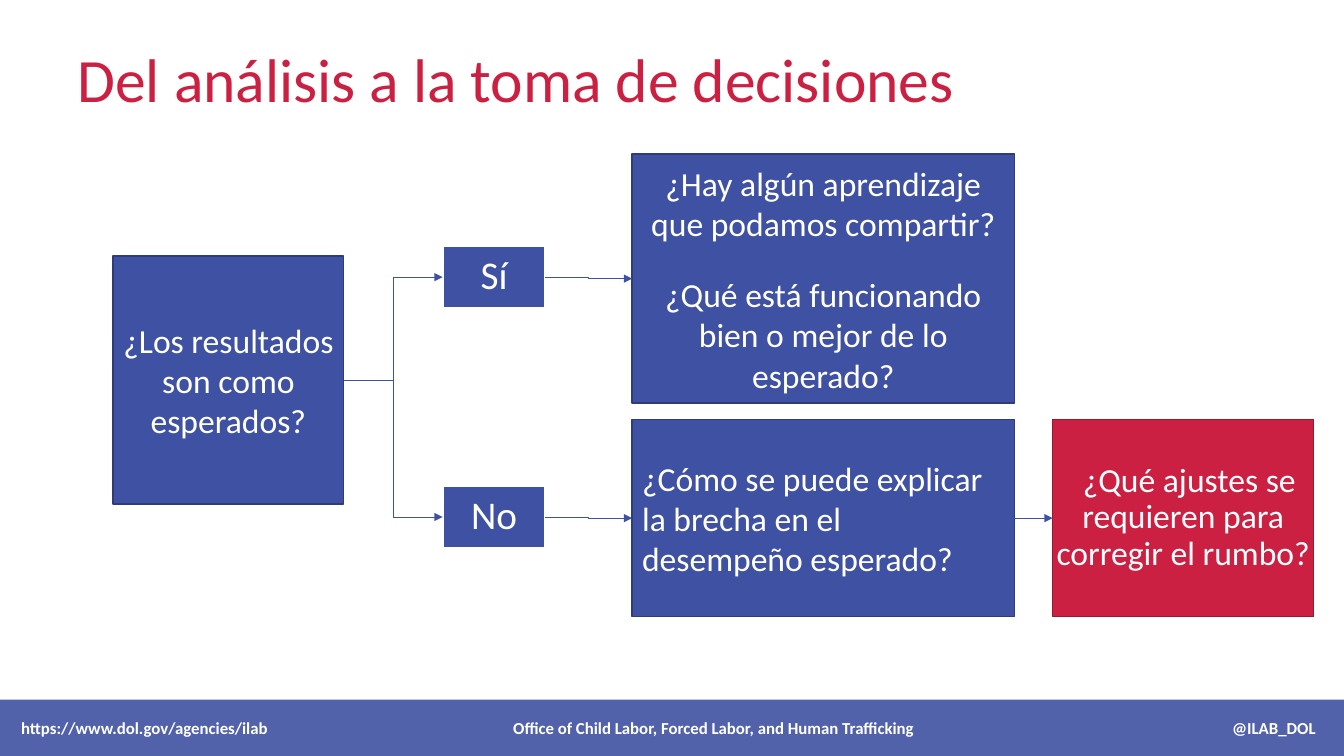
"""Builds the decision-flow slide that leads from analysis to decisions."""
from lxml.etree import SubElement
from pptx import Presentation
from pptx.dml.color import RGBColor
from pptx.enum.shapes import MSO_CONNECTOR as LINK, MSO_SHAPE
from pptx.enum.text import MSO_ANCHOR, PP_ALIGN
from pptx.oxml.ns import qn
from pptx.util import Inches, Pt

BLUE, NAVY, RED, WINE, WHITE = "3F51A2", "2F3C78", "CB2042", "961831", "FFFFFF"
LEFT, CENTER, RIGHT = PP_ALIGN.LEFT, PP_ALIGN.CENTER, PP_ALIGN.RIGHT

TITLE = "Del análisis a la toma de decisiones"
BOX = dict(fill=BLUE, border=NAVY, border_pt=1, size=24, align=CENTER, inset=0.1, spacing=1)
ANSWER = dict(BOX, border=WHITE, border_pt=1.5, size=28, inset=0.02, spacing=0.9)
ACTION = dict(BOX, fill=RED, border=WINE, inset=0.02, spacing=0.9, indent=0.12)
STEPS = {
    "results": ((1.12, 2.54, 2.29, 2.46), ["¿Los resultados son como esperados?"], BOX),
    "yes": ((4.39, 2.44, 1.02, 0.62), ["Sí"], ANSWER),
    "no": ((4.39, 4.82, 1.02, 0.62), ["No"], ANSWER),
    "learning": ((6.27, 1.53, 3.79, 2.47),
                 ["¿Hay algún aprendizaje que podamos compartir?",
                  "¿Qué está funcionando bien o mejor de lo esperado?"], BOX),
    "gap": ((6.27, 4.16, 3.79, 1.96),
            ["¿Cómo se puede explicar la brecha en el desempeño esperado?"],
            dict(BOX, align=LEFT)),
    "adjustments": ((10.44, 4.16, 2.59, 1.96),
                    ["¿Qué ajustes se requieren para corregir el rumbo?"], ACTION),
}
FLOWS = [("results", "yes", LINK.ELBOW), ("results", "no", LINK.ELBOW),
         ("yes", "learning", LINK.ELBOW), ("no", "gap", LINK.ELBOW),
         ("gap", "adjustments", LINK.STRAIGHT)]
FOOTER_TOP, FOOTER_HEIGHT = 6.94, 0.56
FOOTER = [("https://www.dol.gov/agencies/ilab", 0.21, 4, LEFT),
          ("Office of Child Labor, Forced Labor, and Human Trafficking", 4.58, 5, CENTER),
          ("@ILAB_DOL", 11.05, 2, RIGHT)]


def color(hex_code):
    return RGBColor.from_string(hex_code)


def write(shape, lines, size, ink=WHITE, align=LEFT, inset=0.1, spacing=1, indent=0, bold=False):
    frame = shape.text_frame
    frame.text = "\n".join(lines)
    frame.word_wrap = True
    frame.vertical_anchor = MSO_ANCHOR.MIDDLE
    frame.margin_left = frame.margin_right = Inches(inset)
    frame.margin_top = frame.margin_bottom = Inches(min(inset, 0.05))
    for index, paragraph in enumerate(frame.paragraphs):
        paragraph.alignment = align
        paragraph.line_spacing = spacing
        paragraph.space_before = Pt(22 if index else 0)
        if indent:
            paragraph._p.get_or_add_pPr().set("indent", str(Inches(indent)))
        for run in paragraph.runs:
            run.font.name, run.font.size, run.font.bold = "Calibri", Pt(size), bold
            run.font.color.rgb = color(ink)


def add_box(slide, place, fill, border=None, border_pt=1):
    box = slide.shapes.add_shape(MSO_SHAPE.RECTANGLE, *map(Inches, place))
    box.shadow.inherit = False
    box.fill.solid()
    box.fill.fore_color.rgb = color(fill)
    if border:
        box.line.color.rgb = color(border)
        box.line.width = Pt(border_pt)
    else:
        box.line.fill.background()
    return box


def add_step(slide, place, lines, style):
    text = dict(style)
    box = add_box(slide, place, text.pop("fill"), text.pop("border"), text.pop("border_pt"))
    write(box, lines, **text)
    return box


def add_arrow(slide, source, target, kind):
    arrow = slide.shapes.add_connector(kind, 0, 0, 0, 0)
    arrow.begin_connect(source, 3)
    arrow.end_connect(target, 1)
    arrow.line.color.rgb = color(BLUE)
    arrow.line.width = Pt(0.5)
    SubElement(arrow.line._get_or_add_ln(), qn("a:tailEnd"), type="triangle")
    SubElement(arrow._element.spPr, qn("a:effectLst"))


def add_label(slide, place, text, size, **style):
    label = slide.shapes.add_textbox(*map(Inches, place))
    write(label, [text], size, **style)


def main():
    deck = Presentation()
    deck.slide_width, deck.slide_height = Inches(13.33), Inches(7.5)
    slide = deck.slides.add_slide(deck.slide_layouts[6])

    add_label(slide, (0.67, 0.17, 10.01, 1.29), TITLE, 44, ink=RED, spacing=0.9)
    steps = {name: add_step(slide, *step) for name, step in STEPS.items()}
    for source, target, kind in FLOWS:
        add_arrow(slide, steps[source], steps[target], kind)

    band = add_box(slide, (0, FOOTER_TOP, 13.33, FOOTER_HEIGHT), BLUE)
    tint = band._element.spPr.find(qn("a:solidFill"))[0]
    SubElement(tint, qn("a:alpha"), val="90000")
    for text, left, width, align in FOOTER:
        add_label(slide, (left, FOOTER_TOP, width, FOOTER_HEIGHT), text, 12,
                  align=align, inset=0, bold=True)
    deck.save("out.pptx")


if __name__ == "__main__":
    main()
